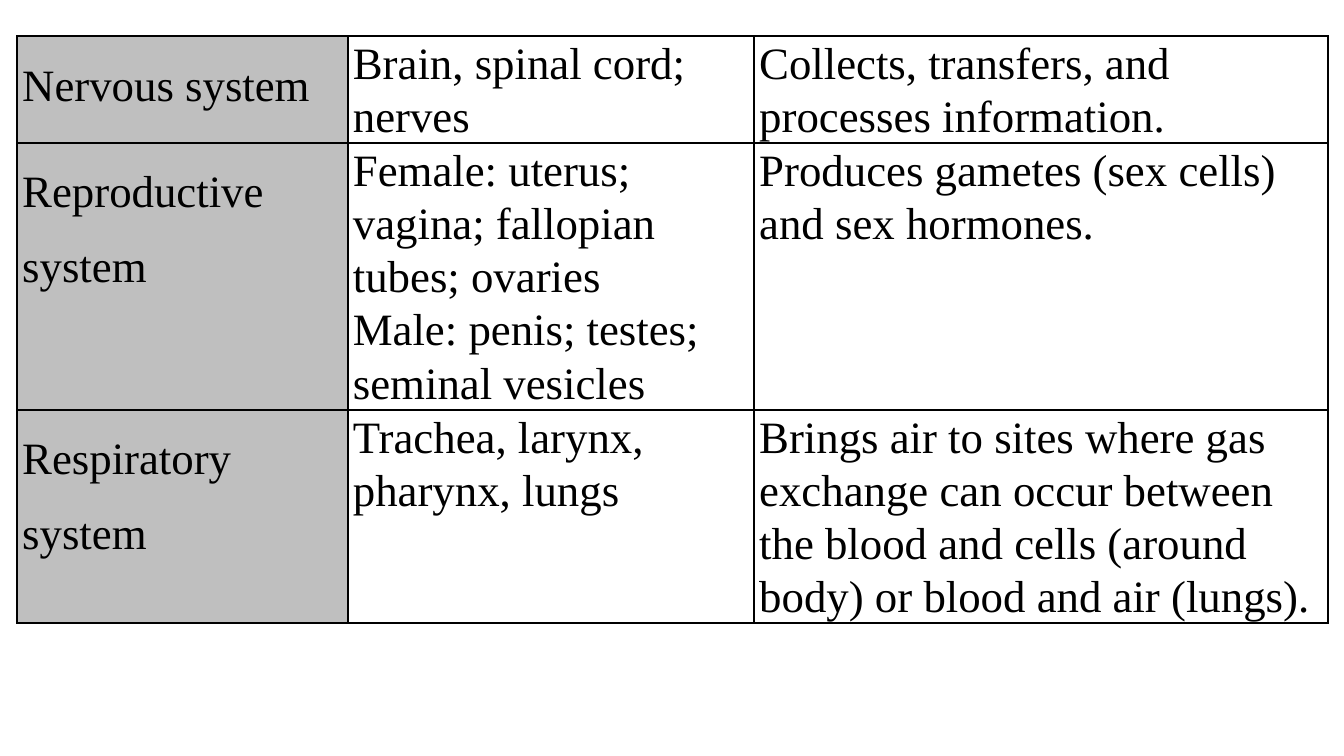
import pptx
import pptx.dml.color
import pptx.util
from lxml import etree
from pptx.oxml.ns import qn
from pptx.util import Inches

COLORS = {"text": "000000", "border": "000000", "label": "BFBFBF"}
FONT = "Times New Roman"
COL_WIDTHS = [3.28, 4.03, 5.69]
ROW_HEIGHTS = [1.05, 2.65, 2.1]
SYSTEMS = [
    ["Nervous system",
     "Brain, spinal cord; nerves",
     "Collects, transfers, and processes information."],
    ["Reproductive system",
     "Female: uterus; vagina; fallopian tubes; ovaries\n"
     "Male: penis; testes; seminal vesicles",
     "Produces gametes (sex cells) and sex hormones."],
    ["Respiratory system",
     "Trachea, larynx, pharynx, lungs",
     "Brings air to sites where gas exchange can occur between the blood "
     "and cells (around body) or blood and air (lungs)."],
]


def rgb(name):
    """Return the named palette colour."""
    return pptx.dml.color.RGBColor.from_string(COLORS[name])


def write(tf, text, size=32, color="text", spacing=1.07):
    """Fill a text frame with one paragraph per line of text."""
    tf.text = text
    for p in tf.paragraphs:
        p.line_spacing = spacing
        for r in p.runs:
            r.font.name = FONT
            r.font.size = pptx.util.Pt(size)
            r.font.color.rgb = rgb(color)


def add_borders(cell, width=1.5):
    """Draw a solid line on all four sides of a cell."""
    tcPr = cell._tc.get_or_add_tcPr()
    for side in ("lnL", "lnR", "lnT", "lnB"):
        ln = etree.SubElement(tcPr, qn(f"a:{side}"), w=str(pptx.util.Pt(width)))
        fill = etree.SubElement(ln, qn("a:solidFill"))
        etree.SubElement(fill, qn("a:srgbClr"), val=COLORS["border"])


def format_cell(cell, text, is_label):
    """Set the margins, borders, fill and text of one cell."""
    cell.margin_left = cell.margin_right = Inches(0.05)
    cell.margin_top = cell.margin_bottom = 0
    add_borders(cell)
    if is_label:
        cell.fill.solid()
        cell.fill.fore_color.rgb = rgb("label")
    else:
        cell.fill.background()
    write(cell.text_frame, text, spacing=1.5 if is_label else 1.07)


def add_systems_table(s, left, top):
    """Place the table of body systems with its corner at left, top."""
    table = s.shapes.add_table(
        len(SYSTEMS), len(COL_WIDTHS), Inches(left), Inches(top),
        Inches(sum(COL_WIDTHS)), Inches(sum(ROW_HEIGHTS))).table
    table.first_row = table.horz_banding = False
    for column, width in zip(table.columns, COL_WIDTHS):
        column.width = Inches(width)
    for i, (height, texts) in enumerate(zip(ROW_HEIGHTS, SYSTEMS)):
        table.rows[i].height = Inches(height)
        for j, text in enumerate(texts):
            format_cell(table.cell(i, j), text, is_label=j == 0)


def main():
    """Build the slide and save it."""
    prs = pptx.Presentation()
    prs.slide_width, prs.slide_height = Inches(13.33), Inches(7.5)
    s = prs.slides.add_slide(prs.slide_layouts[6])
    add_systems_table(s, 0.17, 0.36)
    prs.save("out.pptx")


if __name__ == "__main__":
    main()
